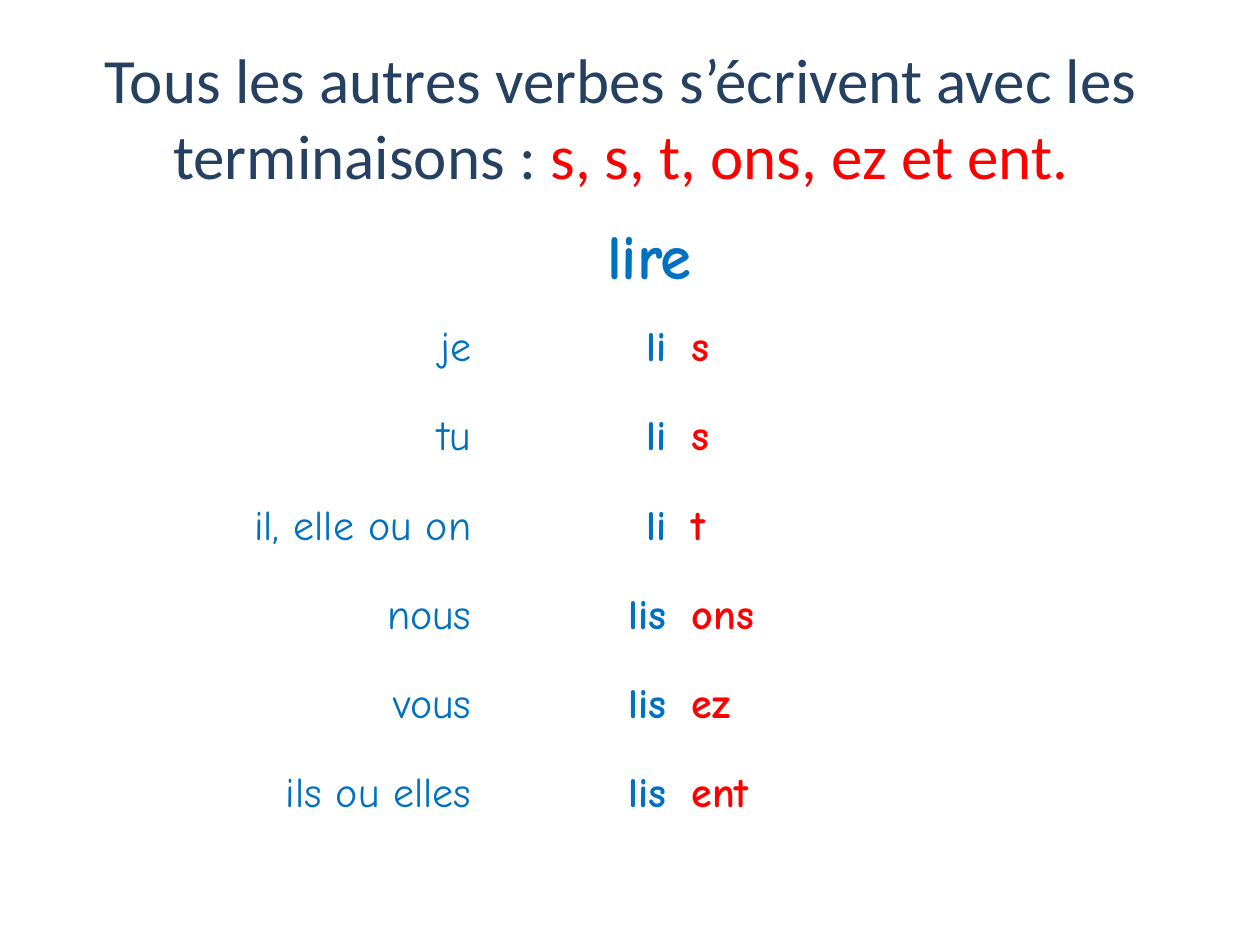
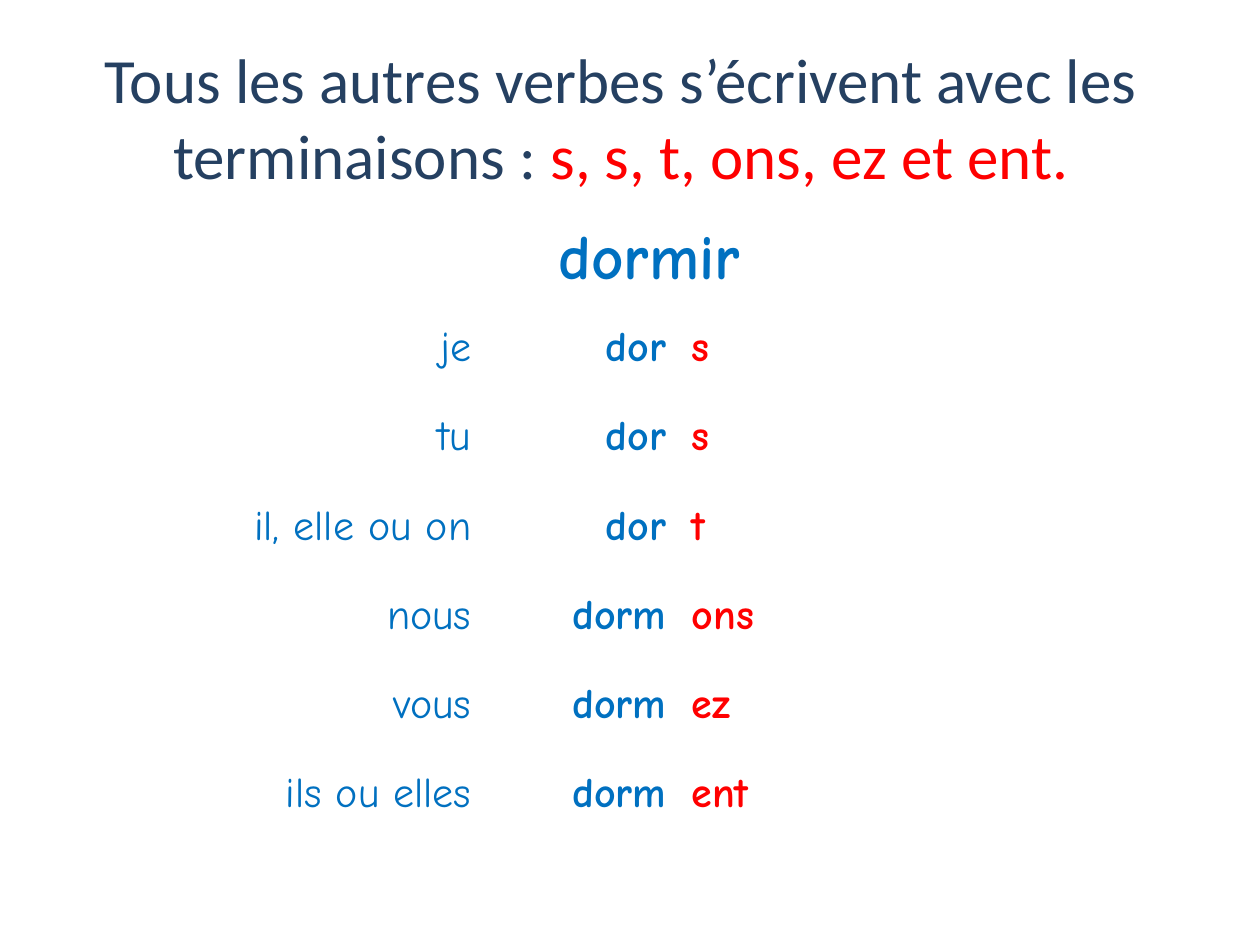
from pptx import Presentation
from pptx.dml.color import RGBColor
from pptx.enum.text import MSO_ANCHOR, PP_ALIGN
from pptx.util import Pt

# Content
TITLE = ("Tous les autres verbes s’écrivent avec les terminaisons : ",
         "s, s, t, ons, ez et ent.")
PRONOUNS = ["je", "tu", "il, elle ou on", "nous", "vous", "ils ou elles"]
ENDINGS = ["s", "s", "t", "ons", "ez", "ent"]
VERBS = [  # infinitive, singular stem, plural stem
    ("lire", "li", "lis"),
    ("dormir", "dor", "dorm"),
]

# Style
NAVY = RGBColor(0x25, 0x40, 0x61)
TITLE_RED = RGBColor(0xFE, 0x00, 0x00)
BLUE = RGBColor(0x00, 0x70, 0xC0)
RED = RGBColor(0xFF, 0x00, 0x00)
WHITE = RGBColor(0xFF, 0xFF, 0xFF)
TITLE_FONT, TABLE_FONT = "Calibri", "Comic Neue"
LEFT, CENTER, RIGHT = PP_ALIGN.LEFT, PP_ALIGN.CENTER, PP_ALIGN.RIGHT
MIDDLE = MSO_ANCHOR.MIDDLE

# Layout in px, 126 to the inch
SLIDE_SIZE = (1260, 945)
TITLE_BOX = (54, 37, 1134, 158)
TABLE_LEFT, TABLE_TOP, TABLE_HEIGHT = 154, 214, 625
COLUMN_WIDTHS = (330, 195, 466)


def px(n):
    return round(n * 914400 / 126)


def style_run(r, font, size, color, bold=False):
    r.font.name, r.font.size, r.font.bold = font, Pt(size), bold
    r.font.color.rgb = color


def add_title(s):
    tf = s.shapes.add_textbox(*map(px, TITLE_BOX)).text_frame
    tf.word_wrap = True
    tf.vertical_anchor = MIDDLE
    p = tf.paragraphs[0]
    p.alignment = CENTER
    for text, color in zip(TITLE, (NAVY, TITLE_RED)):
        r = p.add_run()
        r.text = text
        style_run(r, TITLE_FONT, 36, color)


def fill_cell(cell, text, align, size, color, bold):
    cell.fill.solid()
    cell.fill.fore_color.rgb = WHITE
    cell.vertical_anchor = MIDDLE
    p = cell.text_frame.paragraphs[0]
    p.text = text
    p.alignment = align
    style_run(p.runs[0], TABLE_FONT, size, color, bold)


def add_conjugation(s, infinitive, singular, plural):
    stems = [singular] * 3 + [plural] * 3
    table = s.shapes.add_table(
        len(PRONOUNS) + 1, len(COLUMN_WIDTHS), px(TABLE_LEFT), px(TABLE_TOP),
        px(sum(COLUMN_WIDTHS)), px(TABLE_HEIGHT)).table
    for column, width in zip(table.columns, COLUMN_WIDTHS):
        column.width = px(width)

    # Infinitive across the top row
    table.cell(0, 0).merge(table.cell(0, len(COLUMN_WIDTHS) - 1))
    fill_cell(table.cell(0, 0), infinitive, CENTER, 36, BLUE, True)

    # Pronoun, stem and ending
    for row, (pronoun, stem, ending) in enumerate(zip(PRONOUNS, stems, ENDINGS), 1):
        fill_cell(table.cell(row, 0), pronoun, RIGHT, 24, BLUE, False)
        fill_cell(table.cell(row, 1), stem, RIGHT, 24, BLUE, True)
        fill_cell(table.cell(row, 2), ending, LEFT, 24, RED, True)


def main():
    prs = Presentation()
    prs.slide_width, prs.slide_height = map(px, SLIDE_SIZE)
    for verb in VERBS:
        s = prs.slides.add_slide(prs.slide_layouts[6])
        add_title(s)
        add_conjugation(s, *verb)
    prs.save("out.pptx")


if __name__ == "__main__":
    main()
